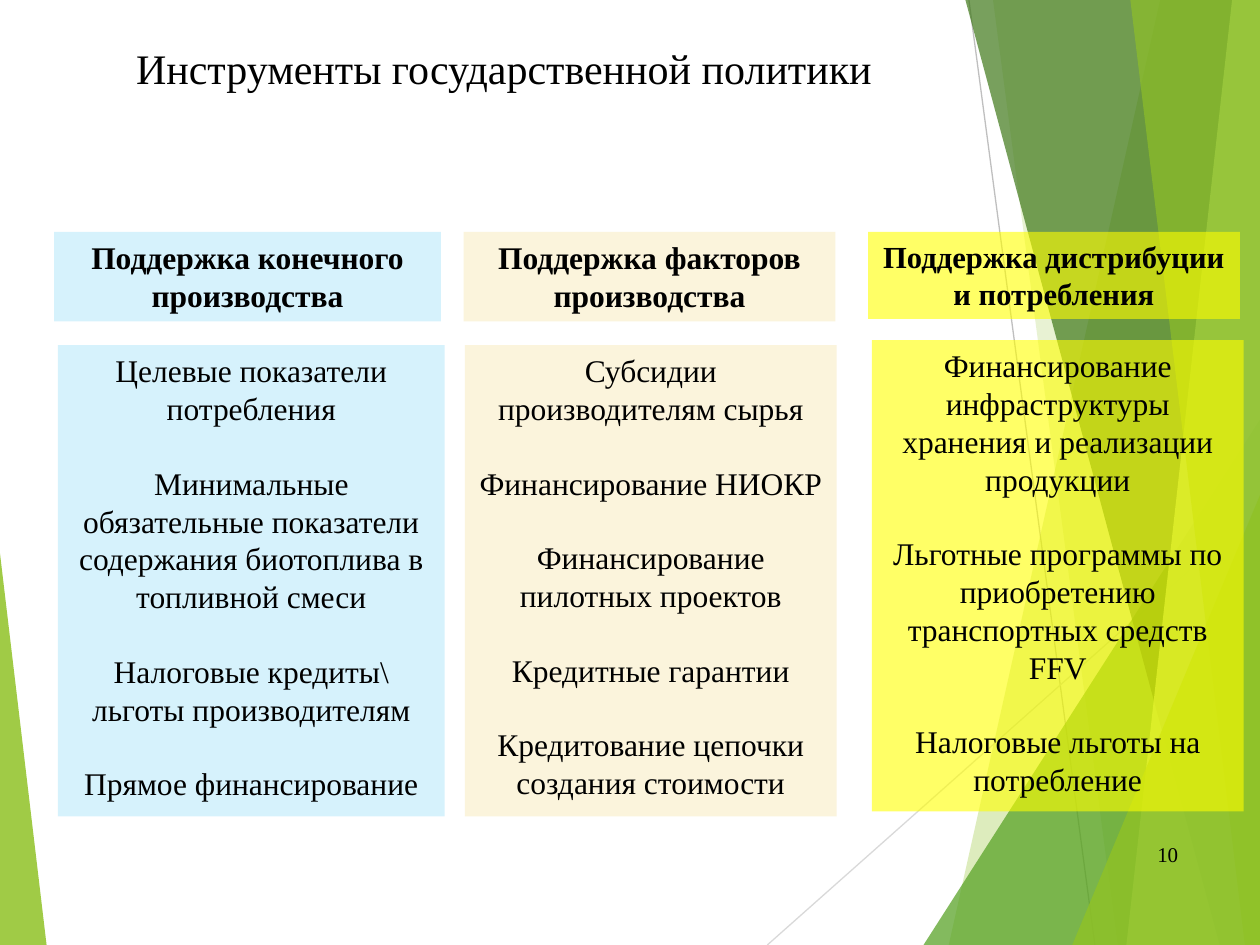
from dataclasses import dataclass

import pptx
import pptx.dml.color
import pptx.enum.shapes
import pptx.enum.text
import pptx.oxml
import pptx.oxml.ns
import pptx.util

PX = 9144  # EMU per px, 100 px to the inch
PAGE_WIDTH, PAGE_HEIGHT = 1000, 750
SHAPES = pptx.enum.shapes.MSO_SHAPE
ALIGN = pptx.enum.text.PP_ALIGN
ANCHOR = pptx.enum.text.MSO_ANCHOR


@dataclass(frozen=True)
class Theme:
    font: str = "Times New Roman"
    ink: str = "000000"
    leaf: str = "90C226"
    light_leaf: str = "C0E474"
    grass: str = "54A021"
    forest: str = "3F7819"
    dark_line: str = "BFBFBF"
    light_line: str = "D9D9D9"
    blue: str = "00B0F0"
    cream: str = "F5E3A5"
    yellow: str = "FFFF00"
    title_size: float = 24
    text_size: float = 18
    small_head_size: float = 17.5
    number_size: float = 12
    item_gap: float = 21
    line_width: float = 0.75


THEME = Theme()


@dataclass(frozen=True)
class Column:
    box: tuple  # left, top, width, height
    head_height: int
    list_shift: int  # how far the list stands right of the heading
    color: str
    opacity: int
    heading: str
    head_size: float
    items: tuple


COLUMNS = (
    Column((43, 184, 310, 464), 71, 3, THEME.blue, 16,
           "Поддержка конечного производства", THEME.text_size,
           ("Целевые показатели потребления",
            "Минимальные обязательные показатели содержания биотоплива в топливной смеси",
            "Налоговые кредиты\\ льготы производителям",
            "Прямое финансирование")),
    Column((368, 184, 296, 464), 71, 1, THEME.cream, 39,
           "Поддержка факторов производства", THEME.text_size,
           ("Субсидии производителям сырья",
            "Финансирование НИОКР",
            "Финансирование пилотных проектов",
            "Кредитные гарантии",
            "Кредитование цепочки создания стоимости")),
    Column((689, 184, 298, 460), 69, 3, THEME.yellow, 60,
           "Поддержка дистрибуции и потребления", THEME.small_head_size,
           ("Финансирование инфраструктуры хранения и реализации продукции",
            "Льготные программы по приобретению транспортных средств FFV",
            "Налоговые льготы на потребление")),
)
LIST_HEIGHT = 374


def rgb(color):
    return pptx.dml.color.RGBColor.from_string(color)


def scaled(*lengths):
    return [pptx.util.Emu(length * PX) for length in lengths]


def paint(shape, color, opacity):
    """Fill a shape with a see-through colour, without line or shadow."""
    shape.shadow.inherit = False
    shape.line.fill.background()
    shape.fill.solid()
    shape.fill.fore_color.rgb = rgb(color)
    tone = shape.element.spPr.find(".//" + pptx.oxml.ns.qn("a:srgbClr"))
    alpha = pptx.oxml.parse_xml(f'<a:alpha {pptx.oxml.ns.nsdecls("a")} val="{opacity * 1000}"/>')
    tone.append(alpha)


def write(shape, lines, size, align, anchor=ANCHOR.TOP, bold=False):
    """Set one paragraph for each line, with a gap between paragraphs."""
    frame = shape.text_frame
    frame.word_wrap = True
    frame.auto_size = pptx.enum.text.MSO_AUTO_SIZE.NONE
    frame.vertical_anchor = anchor
    for index, line in enumerate(lines):
        para = frame.add_paragraph() if index else frame.paragraphs[0]
        para.alignment = align
        para.space_before = pptx.util.Pt(THEME.item_gap if index else 0)
        span = para.add_run()
        span.text = line
        span.font.name = THEME.font
        span.font.size = pptx.util.Pt(size)
        span.font.bold = bold
        span.font.color.rgb = rgb(THEME.ink)


def add_ray(group, start, end, color):
    ray = group.shapes.add_connector(
        pptx.enum.shapes.MSO_CONNECTOR.STRAIGHT, *scaled(*start, *end))
    ray.line.color.rgb = rgb(color)
    ray.line.width = pptx.util.Pt(THEME.line_width)
    ray.element.spPr.append(
        pptx.oxml.parse_xml(f'<a:effectLst {pptx.oxml.ns.nsdecls("a")}/>'))


def add_facet(group, top_x, bottom_x, color, opacity):
    """Fill the page from a slanted edge to its right side."""
    top = -1
    outline = group.shapes.build_freeform(top_x, top, scale=PX)
    outline.add_line_segments(
        [(PAGE_WIDTH, top), (PAGE_WIDTH, PAGE_HEIGHT), (bottom_x, PAGE_HEIGHT)], close=True)
    paint(outline.convert_to_shape(), color, opacity)


def add_wedge(group, left, top, width, apex, color, opacity):
    """Stand a triangle on the bottom edge of the page."""
    wedge = group.shapes.add_shape(
        SHAPES.ISOSCELES_TRIANGLE, *scaled(left, top, width, PAGE_HEIGHT - top))
    wedge.adjustments[0] = apex
    paint(wedge, color, opacity)


def add_backdrop(page):
    group = page.shapes.add_group_shape()
    add_ray(group, (769, 0), (869, PAGE_HEIGHT), THEME.dark_line)
    add_ray(group, (PAGE_WIDTH, 403), (609, PAGE_HEIGHT), THEME.light_line)
    add_facet(group, 921, 753, THEME.leaf, 30)
    add_facet(group, 788, 887, THEME.leaf, 20)
    add_wedge(group, 733, 333, 267, 1, THEME.grass, 72)
    add_facet(group, 766, 968, THEME.forest, 70)
    add_facet(group, 978, 894, THEME.light_leaf, 70)
    add_facet(group, 897, 988, THEME.leaf, 65)
    add_wedge(group, 851, 393, 149, 1, THEME.leaf, 80)
    add_wedge(group, 0, 439, 37, 0, THEME.leaf, 85)


def add_title(page, box):
    title = page.shapes.title
    title.left, title.top, title.width, title.height = scaled(*box)
    write(title, ["Инструменты государственной политики"], THEME.title_size, ALIGN.LEFT)


def add_page_number(page, box):
    number = page.shapes.add_textbox(*scaled(*box))
    write(number, ["10"], THEME.number_size, ALIGN.RIGHT, ANCHOR.MIDDLE)


def add_column(page, column):
    left, top, width, height = column.box
    part_width = width - column.list_shift
    group = page.shapes.add_group_shape()
    head = group.shapes.add_shape(
        SHAPES.RECTANGLE, *scaled(left, top, part_width, column.head_height))
    body = group.shapes.add_shape(
        SHAPES.RECTANGLE,
        *scaled(left + column.list_shift, top + height - LIST_HEIGHT, part_width, LIST_HEIGHT))
    for part in (head, body):
        paint(part, column.color, column.opacity)
    write(head, [column.heading], column.head_size, ALIGN.CENTER, bold=True)
    write(body, column.items, THEME.text_size, ALIGN.CENTER)


def main():
    deck = pptx.Presentation()
    deck.slide_width, deck.slide_height = scaled(PAGE_WIDTH, PAGE_HEIGHT)
    page = deck.slides.add_slide(deck.slide_layouts.get_by_name("Title Only"))
    add_backdrop(page)
    add_page_number(page, (889, 658, 56, 40))
    add_title(page, (98, 29, 819, 50))
    for column in COLUMNS:
        add_column(page, column)
    deck.save("out.pptx")


if __name__ == "__main__":
    main()
